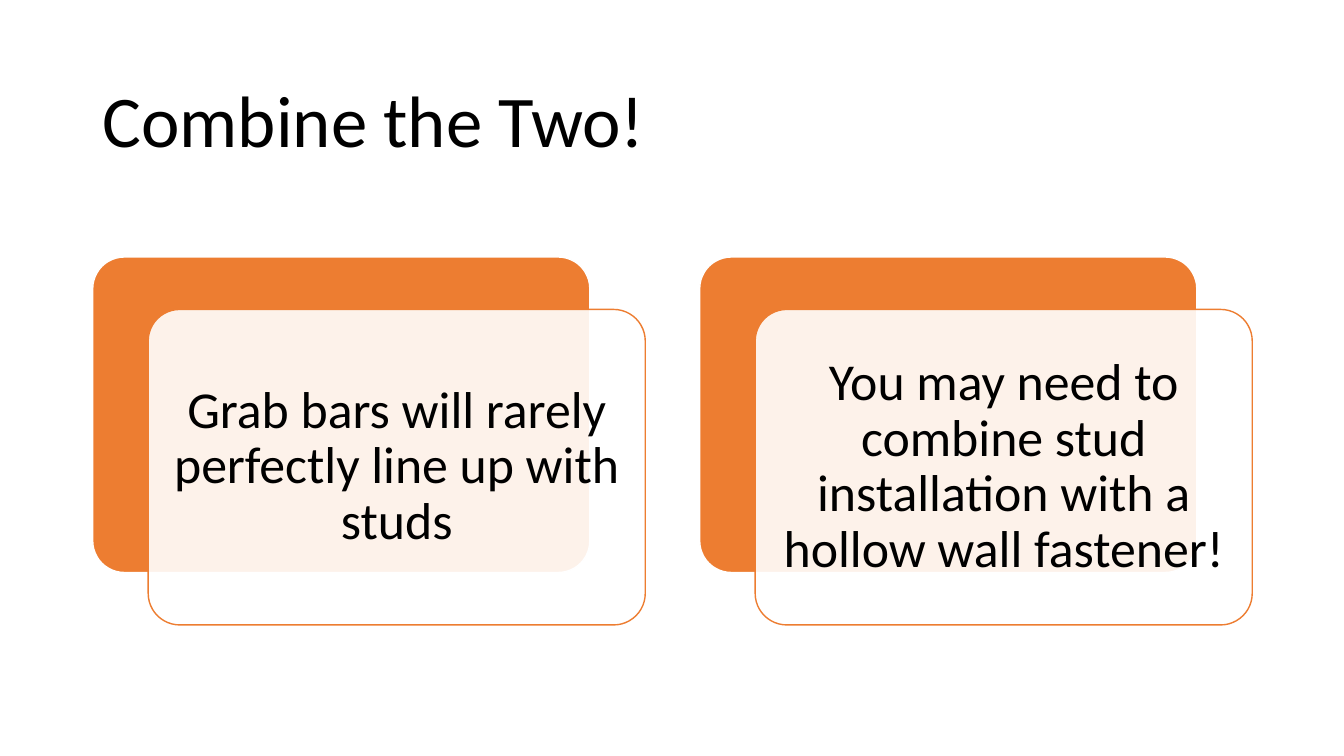
from lxml.etree import SubElement
from pptx import Presentation
from pptx.dml.color import RGBColor
from pptx.enum.shapes import MSO_SHAPE
from pptx.enum.text import MSO_ANCHOR, PP_ALIGN
from pptx.oxml.ns import qn
from pptx.util import Inches, Pt

ORANGE = RGBColor(0xED, 0x7D, 0x31)
WHITE = RGBColor(0xFF, 0xFF, 0xFF)
BLACK = RGBColor(0x00, 0x00, 0x00)

CARD_SIZE = (4.93, 3.13)
CARD_LEFT, CARD_TOP, CARD_STEP = 0.92, 2.55, 6.02
FRONT_SHIFT = (0.55, 0.52)
TEXT_INSET = 0.09
MESSAGES = (
    "Grab bars will rarely perfectly line up with studs",
    "You may need to combine stud installation with a hollow wall fastener!",
)


class SlideBuilder:
    """Draws cards and text on one slide in a shared style."""

    font_name = "Calibri"

    def __init__(self, slide):
        self.slide = slide

    def text(self, wording, left, top, width, height, size, align, margins):
        box = self.slide.shapes.add_textbox(
            Inches(left), Inches(top), Inches(width), Inches(height))
        frame = box.text_frame
        horizontal, vertical = (Inches(margin) for margin in margins)
        frame_format = {
            "word_wrap": True,
            "vertical_anchor": MSO_ANCHOR.MIDDLE,
            "margin_left": horizontal,
            "margin_right": horizontal,
            "margin_top": vertical,
            "margin_bottom": vertical,
        }
        for name, value in frame_format.items():
            setattr(frame, name, value)
        para = frame.paragraphs[0]
        for name, value in {"alignment": align, "line_spacing": 0.9}.items():
            setattr(para, name, value)
        span = para.add_run()
        span.text = wording
        for name, value in {"name": self.font_name, "size": Pt(size)}.items():
            setattr(span.font, name, value)
        span.font.color.rgb = BLACK

    def card(self, left, top, fill, line, opacity=100):
        width, height = CARD_SIZE
        card = self.slide.shapes.add_shape(
            MSO_SHAPE.ROUNDED_RECTANGLE,
            Inches(left), Inches(top), Inches(width), Inches(height))
        card.adjustments[0] = 0.1
        card.shadow.inherit = False
        card.fill.solid()
        card.fill.fore_color.rgb = fill
        card.line.color.rgb = line
        card.line.width = Pt(1)
        if opacity < 100:
            color = card.fill._xPr.find(qn("a:solidFill"))[0]
            SubElement(color, qn("a:alpha"), val=str(opacity * 1000))

    def layered_card(self, wording, left, top):
        width, height = CARD_SIZE
        front_left, front_top = left + FRONT_SHIFT[0], top + FRONT_SHIFT[1]
        self.card(left, top, ORANGE, WHITE)
        self.card(front_left, front_top, WHITE, ORANGE, opacity=90)
        self.text(
            wording, front_left + TEXT_INSET, front_top + TEXT_INSET,
            width - 2 * TEXT_INSET, height - 2 * TEXT_INSET,
            37, PP_ALIGN.CENTER, (0.15, 0.15))


def main():
    deck = Presentation()
    deck.slide_width = Inches(13.33)
    deck.slide_height = Inches(7.5)
    page = SlideBuilder(deck.slides.add_slide(deck.slide_layouts[6]))
    page.text("Combine the Two!", 0.92, 0.61, 11.5, 1.24,
              52, PP_ALIGN.LEFT, (0.1, 0.05))
    for index, message in enumerate(MESSAGES):
        page.layered_card(message, CARD_LEFT + index * CARD_STEP, CARD_TOP)
    deck.save("out.pptx")


if __name__ == "__main__":
    main()
